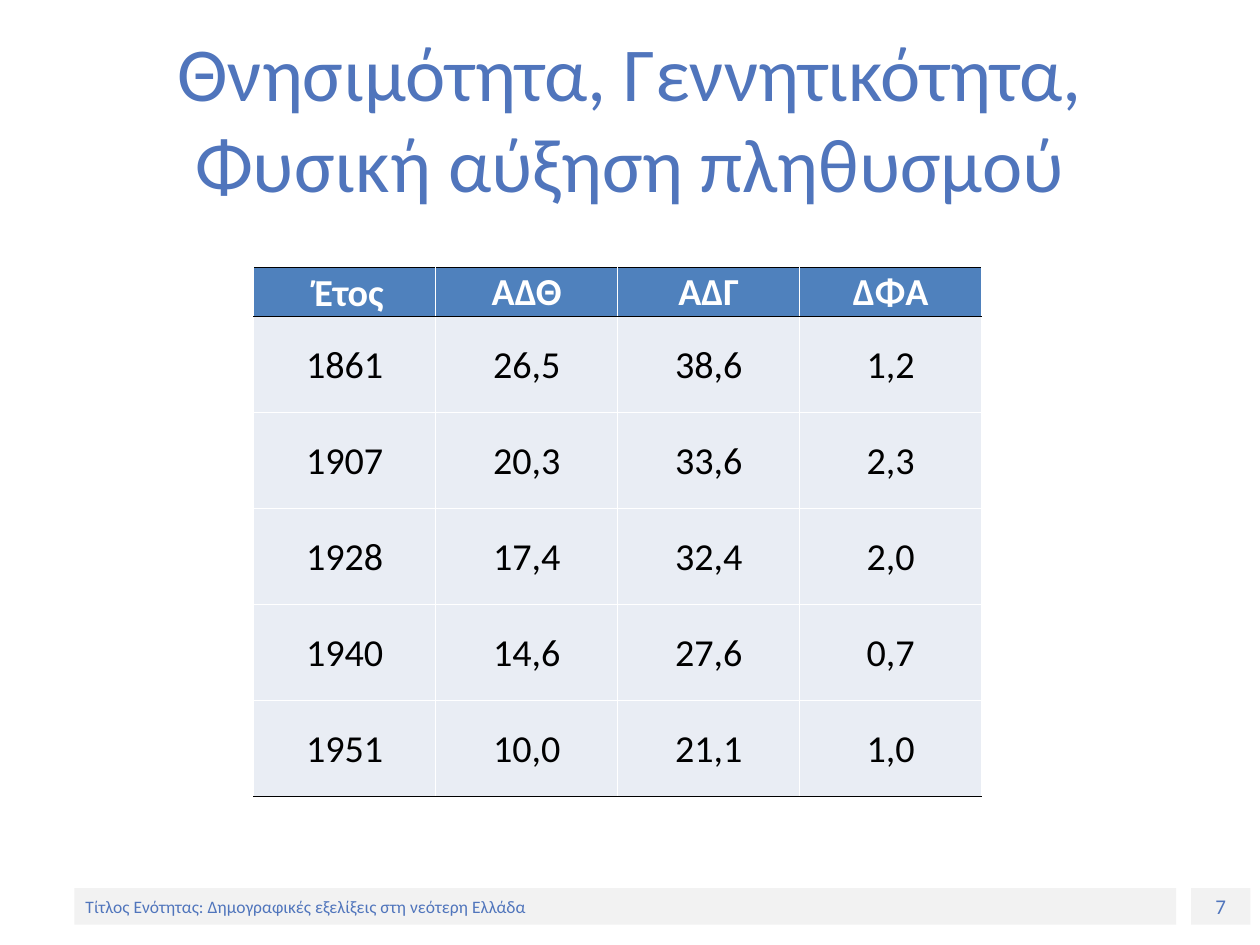
"""Build the slide on mortality, birth rate and natural growth."""
from lxml import etree
from pptx import Presentation
from pptx.dml.color import RGBColor
from pptx.enum.shapes import MSO_SHAPE
from pptx.enum.text import MSO_ANCHOR, PP_ALIGN
from pptx.oxml.ns import qn
from pptx.util import Cm, Inches, Pt

RECT = MSO_SHAPE.RECTANGLE
MIDDLE, BOTTOM = MSO_ANCHOR.MIDDLE, MSO_ANCHOR.BOTTOM
LEFT, CENTER = PP_ALIGN.LEFT, PP_ALIGN.CENTER
BLUE = RGBColor(0x50, 0x75, 0xBC)
HEAD = RGBColor(0x4F, 0x81, 0xBD)
PALE = RGBColor(0xE9, 0xED, 0xF4)
GREY = RGBColor(0xF2, 0xF2, 0xF2)
WHITE = RGBColor(0xFF, 0xFF, 0xFF)
BLACK = RGBColor(0x00, 0x00, 0x00)


def write(frame, text, size, color, align, bold=False):
    frame.word_wrap = True
    para = frame.paragraphs[0]
    para.text = text
    para.alignment = align
    font = para.font
    font.name, font.size, font.bold = "Calibri", Pt(size), bold
    font.color.rgb = color


def edge(cell, side, color):
    line = etree.SubElement(cell._tc.get_or_add_tcPr(), qn("a:" + side), w=str(Pt(1)))
    fill = etree.SubElement(line, qn("a:solidFill"))
    etree.SubElement(fill, qn("a:srgbClr"), val=str(color))


deck = Presentation()
deck.slide_width = Cm(28)
deck.slide_height = Cm(21)
slide = deck.slides.add_slide(deck.slide_layouts[6])
shapes = slide.shapes

footer = "Τίτλος Ενότητας: Δημογραφικές εξελίξεις στη νεότερη Ελλάδα"
bars = [(10.42, 0.52, "7", 13.2, CENTER), (0.65, 9.64, footer, 11, LEFT)]
for left, width, text, size, align in bars:
    bar = shapes.add_shape(RECT, Inches(left), Inches(7.77), Inches(width), Inches(0.32))
    bar.shadow.inherit = False
    bar.fill.solid()
    bar.fill.fore_color.rgb = GREY
    bar.line.fill.background()
    bar.text_frame.vertical_anchor = MIDDLE
    write(bar.text_frame, text, size, BLUE, align)

title = shapes.add_textbox(Inches(0.55), Inches(0.33), Inches(9.92), Inches(1.38))
title.text_frame.vertical_anchor = MIDDLE
write(title.text_frame, "Θνησιμότητα, Γεννητικότητα, Φυσική αύξηση πληθυσμού", 48, BLUE, CENTER)

rates = [
    (" Έτος", "ΑΔΘ", "ΑΔΓ", "ΔΦΑ"),
    ("1861", "26,5", "38,6", "1,2"),
    ("1907", "20,3", "33,6", "2,3"),
    ("1928", "17,4", "32,4", "2,0"),
    ("1940", "14,6", "27,6", "0,7"),
    ("1951", "10,0", "21,1", "1,0"),
]
last = len(rates) - 1
grid = shapes.add_table(
    len(rates), len(rates[0]), Inches(2.22), Inches(2.34), Inches(6.37), Inches(4.62)
).table
for r, row in enumerate(rates):
    top = r == 0
    grid.rows[r].height = Inches(0.43 if top else 0.84)
    for c, text in enumerate(row):
        cell = grid.cell(r, c)
        cell.margin_left = cell.margin_right = cell.margin_top = Inches(0.01)
        cell.margin_bottom = 0
        cell.vertical_anchor = BOTTOM if top and c == 0 else MIDDLE
        write(cell.text_frame, text, 24, WHITE if top else BLACK, CENTER, top)
        edge(cell, "lnL", WHITE)
        edge(cell, "lnR", WHITE)
        edge(cell, "lnT", BLACK if r < 2 else WHITE)
        edge(cell, "lnB", BLACK if r in (0, last) else WHITE)
        cell.fill.solid()
        cell.fill.fore_color.rgb = HEAD if top else PALE

deck.save("out.pptx")
